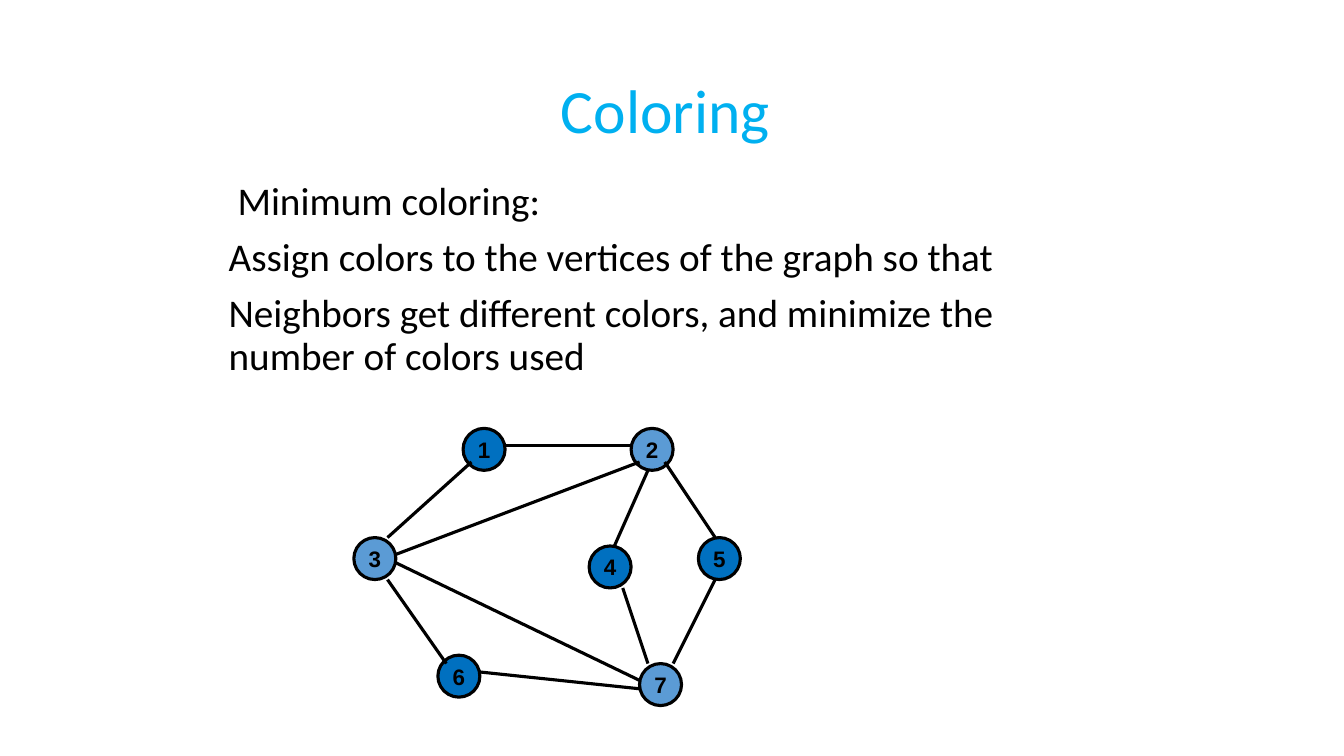
from lxml import etree
from pptx import Presentation
from pptx.dml.color import RGBColor
from pptx.enum.shapes import MSO_CONNECTOR, MSO_SHAPE
from pptx.enum.text import MSO_ANCHOR, MSO_AUTO_SIZE, PP_ALIGN
from pptx.oxml.ns import qn
from pptx.util import Inches, Pt

OVAL, STRAIGHT = MSO_SHAPE.OVAL, MSO_CONNECTOR.STRAIGHT
MIDDLE, CENTER, NO_FIT = MSO_ANCHOR.MIDDLE, PP_ALIGN.CENTER, MSO_AUTO_SIZE.NONE

COLORS = {"title": "00B0F0", "ink": "000000", "dark": "0070C0", "light": "5B9BD5"}

BODY = [
    " Minimum coloring:",
    "Assign colors to the vertices of the graph so that",
    "Neighbors get different colors, and minimize the number of colors used",
]

# The graph lies on a grid of 12 cells per inch
CELLS_PER_INCH = 12
VERTEX_CELLS = 5
VERTICES = [  # label, color class, column, row
    ("1", "dark", 13, 0),
    ("3", "light", 0, 13),
    ("2", "light", 33, 0),
    ("6", "dark", 10, 27),
    ("7", "light", 34, 28),
    ("4", "dark", 28, 14),
    ("5", "dark", 41, 13),
]
EDGES = [  # start column and row, end column and row
    (4, 13, 14, 4),    # 3-1
    (18, 2, 33, 2),    # 1-2
    (37, 4, 43, 13),   # 2-5
    (35, 5, 31, 14),   # 2-4
    (5, 15, 34, 4),    # 3-2
    (4, 18, 11, 28),   # 3-6
    (5, 16, 34, 30),   # 3-7
    (15, 29, 34, 31),  # 6-7
    (32, 19, 35, 28),  # 4-7
    (43, 18, 38, 28),  # 5-7
]


def rgb(name):
    return RGBColor.from_string(COLORS[name])


def set_font(p, name, size, color, bold=False):
    p.font.name, p.font.size, p.font.bold = name, Pt(size), bold
    p.font.color.rgb = rgb(color)


def set_line(line):
    line.color.rgb = rgb("ink")
    line.width = Pt(2.25)


def add_title(s, x, y, w, h):
    sp = s.shapes.title
    sp.left, sp.top, sp.width, sp.height = map(Inches, (x, y, w, h))
    tf = sp.text_frame
    tf.text = "Coloring "
    tf.auto_size, tf.vertical_anchor = NO_FIT, MIDDLE
    p = tf.paragraphs[0]
    p.alignment, p.line_spacing = CENTER, 0.9
    set_font(p, "Calibri", 44, "title")


def add_body(s, x, y, w, h):
    tf = s.shapes.add_textbox(*map(Inches, (x, y, w, h))).text_frame
    tf.word_wrap = True
    tf.text = "\n".join(BODY)
    for p in tf.paragraphs:
        p.line_spacing, p.space_before = 0.9, Pt(10)
        set_font(p, "Calibri", 28, "ink")


def add_graph(s, x, y):
    def place(col, row):
        return Inches(x + col / CELLS_PER_INCH), Inches(y + row / CELLS_PER_INCH)

    # Vertices
    size = Inches(VERTEX_CELLS / CELLS_PER_INCH)
    for label, color, col, row in VERTICES:
        sp = s.shapes.add_shape(OVAL, *place(col, row), size, size)
        sp.shadow.inherit = False
        sp.fill.solid()
        sp.fill.fore_color.rgb = rgb(color)
        set_line(sp.line)
        tf = sp.text_frame
        tf.text, tf.word_wrap, tf.vertical_anchor = label, False, MIDDLE
        p = tf.paragraphs[0]
        p.alignment = CENTER
        set_font(p, "Arial", 16, "ink", bold=True)

    # Edges
    for col1, row1, col2, row2 in EDGES:
        edge = s.shapes.add_connector(STRAIGHT, *place(col1, row1), *place(col2, row2))
        set_line(edge.line)
        etree.SubElement(edge._element.spPr, qn("a:effectLst"))


def main():
    prs = Presentation()
    prs.slide_width, prs.slide_height = Inches(13.33), Inches(7.5)
    s = prs.slides.add_slide(prs.slide_layouts[5])
    add_title(s, 0.92, 0.4, 11.5, 1.45)
    add_body(s, 2.17, 1.75, 9, 2.25)
    add_graph(s, 3.51, 4.25)
    prs.save("out.pptx")


if __name__ == "__main__":
    main()
